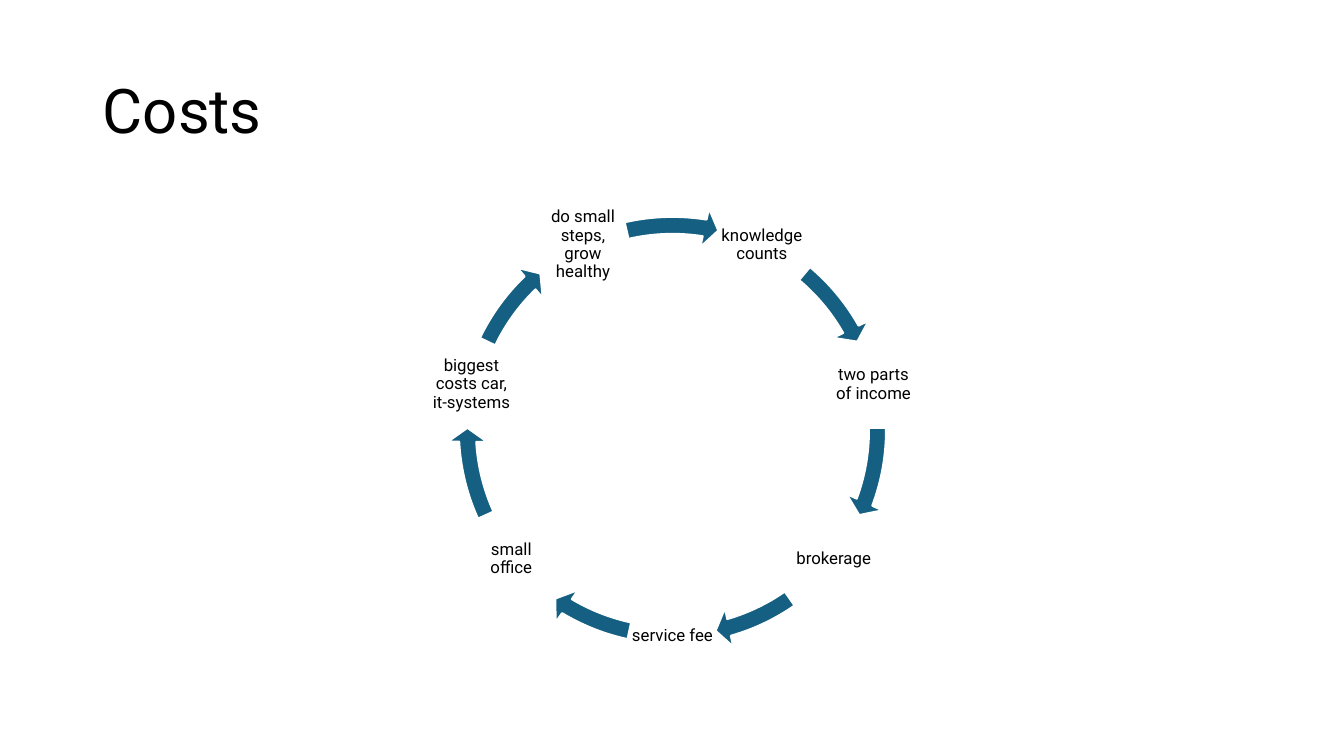
import math
from dataclasses import dataclass

from pptx import Presentation
from pptx import util as u
from pptx.dml.color import RGBColor
from pptx.enum import shapes, text

COLORS = {"text": "000000", "arrow": "156082", "edge": "FFFFFF"}
FONT = "Roboto"

# Ring geometry, in inches
CENTER_X, CENTER_Y = 6.67, 4.27
LABEL_RADIUS = 2.045
LABEL_SIZE = 0.86
RING_SIZE = 4.46
INSET = 0.02

# A circular arrow stores angles in 60000ths of a degree, scaled by 100000
ANGLE_UNIT = 0.6


@dataclass
class Step:
    label: str
    arrow_start: float  # degrees, clockwise from three o'clock
    arrow_end: float


STEPS = [
    Step("knowledge counts", 310.09, 330.45),
    Step("two parts of income", 359.29, 20.5),
    Step("brokerage", 55.13, 73.96),
    Step("service fee", 102.13, 120.96),
    Step("small office", 155.58, 176.8),
    Step("biggest costs car, it-systems", 205.64, 226),
    Step("do small steps, grow healthy", 257.07, 279.02),
]


def color(name: str) -> RGBColor:
    return RGBColor.from_string(COLORS[name])


def set_all(target, values: dict) -> None:
    for name, value in values.items():
        setattr(target, name, value)


def write(tf, content: str, size: float, align) -> None:
    set_all(tf, {"word_wrap": True, "vertical_anchor": text.MSO_ANCHOR.MIDDLE})
    p = tf.paragraphs[0]
    set_all(p, {"alignment": align, "line_spacing": 0.9})
    r = p.add_run()
    r.text = content
    set_all(r.font, {"name": FONT, "size": u.Pt(size)})
    r.font.color.rgb = color("text")


def square(cx: float, cy: float, side: float) -> list:
    return [u.Inches(v) for v in (cx - side / 2, cy - side / 2, side, side)]


def add_label(group, label: str, angle: float) -> None:
    cx = CENTER_X + LABEL_RADIUS * math.cos(math.radians(angle))
    cy = CENTER_Y + LABEL_RADIUS * math.sin(math.radians(angle))
    tf = group.shapes.add_textbox(*square(cx, cy, LABEL_SIZE)).text_frame
    sides = ("left", "top", "right", "bottom")
    set_all(tf, {f"margin_{side}": u.Inches(INSET) for side in sides})
    write(tf, label, 12, text.PP_ALIGN.CENTER)


def add_arrow(group, step: Step) -> None:
    sp = group.shapes.add_shape(shapes.MSO_SHAPE.CIRCULAR_ARROW,
                                *square(CENTER_X, CENTER_Y, RING_SIZE))
    values = (0.038, 2.348, step.arrow_end * ANGLE_UNIT,
              step.arrow_start * ANGLE_UNIT, 0.044)
    for i, value in enumerate(values):
        sp.adjustments[i] = value
    sp.shadow.inherit = False
    sp.fill.solid()
    sp.fill.fore_color.rgb = color("arrow")
    sp.line.color.rgb = color("edge")
    sp.line.width = u.Pt(1.5)


def main() -> None:
    prs = Presentation()
    set_all(prs, {"slide_width": u.Inches(13.33), "slide_height": u.Inches(7.5)})
    s = prs.slides.add_slide(prs.slide_layouts[5])

    # Title
    title = s.shapes.title
    set_all(title, {"left": u.Inches(0.92), "top": u.Inches(0.4),
                    "width": u.Inches(11.5), "height": u.Inches(1.45)})
    write(title.text_frame, "Costs", 44, text.PP_ALIGN.LEFT)

    # Cycle: labels evenly spaced, each followed by its arrow
    cycle = s.shapes.add_group_shape()
    pitch = 360 / len(STEPS)
    for i, step in enumerate(STEPS):
        add_label(cycle, step.label, -90 + pitch * (i + 0.5))
        add_arrow(cycle, step)

    prs.save("out.pptx")


if __name__ == "__main__":
    main()
